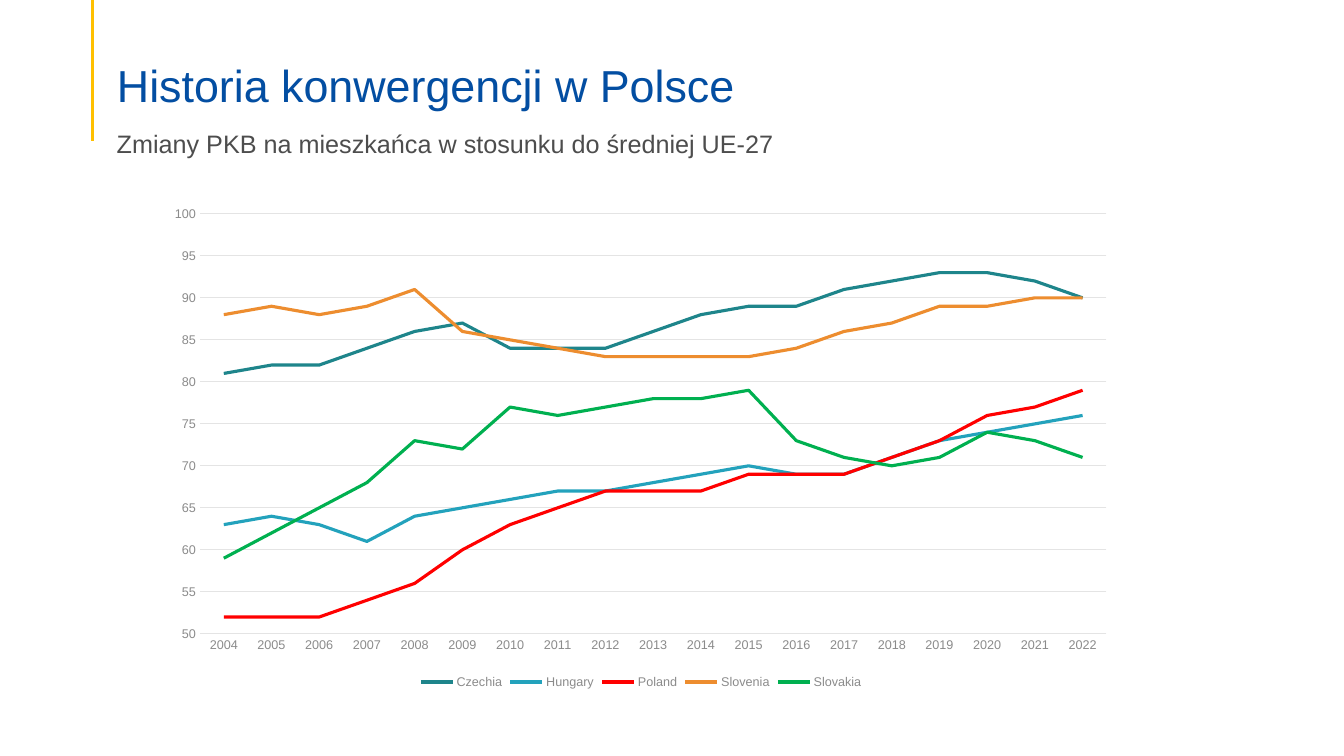
from pptx import Presentation
from pptx.chart.data import CategoryChartData
from pptx.dml.color import RGBColor
from pptx.enum.chart import XL_CHART_TYPE, XL_LEGEND_POSITION, XL_MARKER_STYLE, XL_TICK_MARK
from pptx.enum.shapes import MSO_CONNECTOR
from pptx.enum.text import MSO_ANCHOR, MSO_AUTO_SIZE, PP_ALIGN
from pptx.oxml import parse_xml
from pptx.oxml.ns import nsdecls
from pptx.util import Pt

LINE = XL_CHART_TYPE.LINE
BOTTOM = XL_LEGEND_POSITION.BOTTOM
NO_MARKER = XL_MARKER_STYLE.NONE
NO_TICK = XL_TICK_MARK.NONE

BLUE = RGBColor(0x03, 0x4E, 0xA2)
GOLD = RGBColor(0xFF, 0xC0, 0x00)
DARK = RGBColor(0x4D, 0x4D, 0x4D)
GREY = RGBColor(0x8B, 0x8B, 0x8B)
PALE = RGBColor(0xE4, 0xE4, 0xE4)
TEAL = RGBColor(0x1E, 0x85, 0x8B)
CYAN = RGBColor(0x23, 0xA2, 0xBC)
RED = RGBColor(0xFF, 0x00, 0x00)
ORANGE = RGBColor(0xED, 0x8D, 0x2F)
GREEN = RGBColor(0x00, 0xB0, 0x50)

# GDP per capita, EU-27 = 100
YEARS = [str(year) for year in range(2004, 2023)]
COUNTRIES = [
    ("Czechia", TEAL, (81, 82, 82, 84, 86, 87, 84, 84, 84, 86, 88, 89, 89, 91, 92, 93, 93, 92, 90)),
    ("Hungary", CYAN, (63, 64, 63, 61, 64, 65, 66, 67, 67, 68, 69, 70, 69, 69, 71, 73, 74, 75, 76)),
    ("Poland", RED, (52, 52, 52, 54, 56, 60, 63, 65, 67, 67, 67, 69, 69, 69, 71, 73, 76, 77, 79)),
    ("Slovenia", ORANGE, (88, 89, 88, 89, 91, 86, 85, 84, 83, 83, 83, 83, 84, 86, 87, 89, 89, 90, 90)),
    ("Slovakia", GREEN, (59, 62, 65, 68, 73, 72, 77, 76, 77, 78, 78, 79, 73, 71, 70, 71, 74, 73, 71)),
]


def set_font(font, size, color):
    font.name = "Arial"
    font.size = Pt(size)
    font.color.rgb = color


prs = Presentation()
prs.slide_width, prs.slide_height = Pt(960), Pt(540)
s = prs.slides.add_slide(prs.slide_layouts[5])

# Gold rule
rule = s.shapes.add_connector(MSO_CONNECTOR.STRAIGHT, Pt(66.24), Pt(0), Pt(66.24), Pt(100.8))
rule.line.color.rgb = GOLD
rule.line.width = Pt(2.25)
rule._element.spPr.append(parse_xml(f"<a:effectLst {nsdecls('a')}/>"))

# Title
title = s.shapes.title
title.left, title.top, title.width, title.height = Pt(76.32), Pt(18), Pt(828), Pt(61.92)
tf = title.text_frame
title_format = {"vertical_anchor": MSO_ANCHOR.BOTTOM, "auto_size": MSO_AUTO_SIZE.NONE,
                "word_wrap": True, "margin_bottom": Pt(0)}
for name, value in title_format.items():
    setattr(tf, name, value)
p = tf.paragraphs[0]
p.alignment = PP_ALIGN.LEFT
p.line_spacing = 0.9
r = p.add_run()
r.text = "Historia konwergencji w Polsce"
set_font(r.font, 32, BLUE)

# Subtitle
sp = s.shapes.add_textbox(Pt(76.32), Pt(87.84), Pt(694.08), Pt(28.8))
tf = sp.text_frame
tf.word_wrap = True
p = tf.paragraphs[0]
p.space_after = Pt(18)
r = p.add_run()
r.text = "Zmiany PKB na mieszkańca w stosunku do średniej UE-27"
set_font(r.font, 18, DARK)

# Line chart
data = CategoryChartData(number_format="#,##0")
data.categories = YEARS
for country, color, values in COUNTRIES:
    data.add_series(country, values)
chart = s.shapes.add_chart(LINE, Pt(110.88), Pt(141.12), Pt(694.08), Pt(354.24), data).chart
set_font(chart.font, 10, DARK)
chart.has_title = False
chart.plots[0].vary_by_categories = False
for series, (country, color, values) in zip(chart.plots[0].series, COUNTRIES):
    series.smooth = False
    series.marker.style = NO_MARKER
    series.format.line.color.rgb = color
    series.format.line.width = Pt(2.25)

# Axes and gridlines
years, index = chart.category_axis, chart.value_axis
for axis in (years, index):
    axis.major_tick_mark = axis.minor_tick_mark = NO_TICK
    set_font(axis.tick_labels.font, 9, GREY)
index_format = {"minimum_scale": 50, "maximum_scale": 100, "major_unit": 5,
                "has_major_gridlines": True}
for name, value in index_format.items():
    setattr(index, name, value)
index.tick_labels.number_format = "#,##0"
index.tick_labels.number_format_is_linked = False
index.format.line.fill.background()
for line in (years.format.line, index.major_gridlines.format.line):
    line.color.rgb = PALE
    line.width = Pt(0.75)

# Legend
chart.has_legend = True
chart.legend.position = BOTTOM
chart.legend.include_in_layout = False
set_font(chart.legend.font, 9, GREY)

# Plot area as fractions of the chart frame
plot_area = chart._chartSpace.chart.plotArea
for old in plot_area.xpath("c:layout"):
    plot_area.remove(old)
plot_area.insert(0, parse_xml(
    f'<c:layout {nsdecls("c")}><c:manualLayout><c:layoutTarget val="inner"/>'
    '<c:xMode val="edge"/><c:yMode val="edge"/><c:x val="0.046"/><c:y val="0.033"/>'
    '<c:w val="0.933"/><c:h val="0.847"/></c:manualLayout></c:layout>'))

prs.save("out.pptx")
